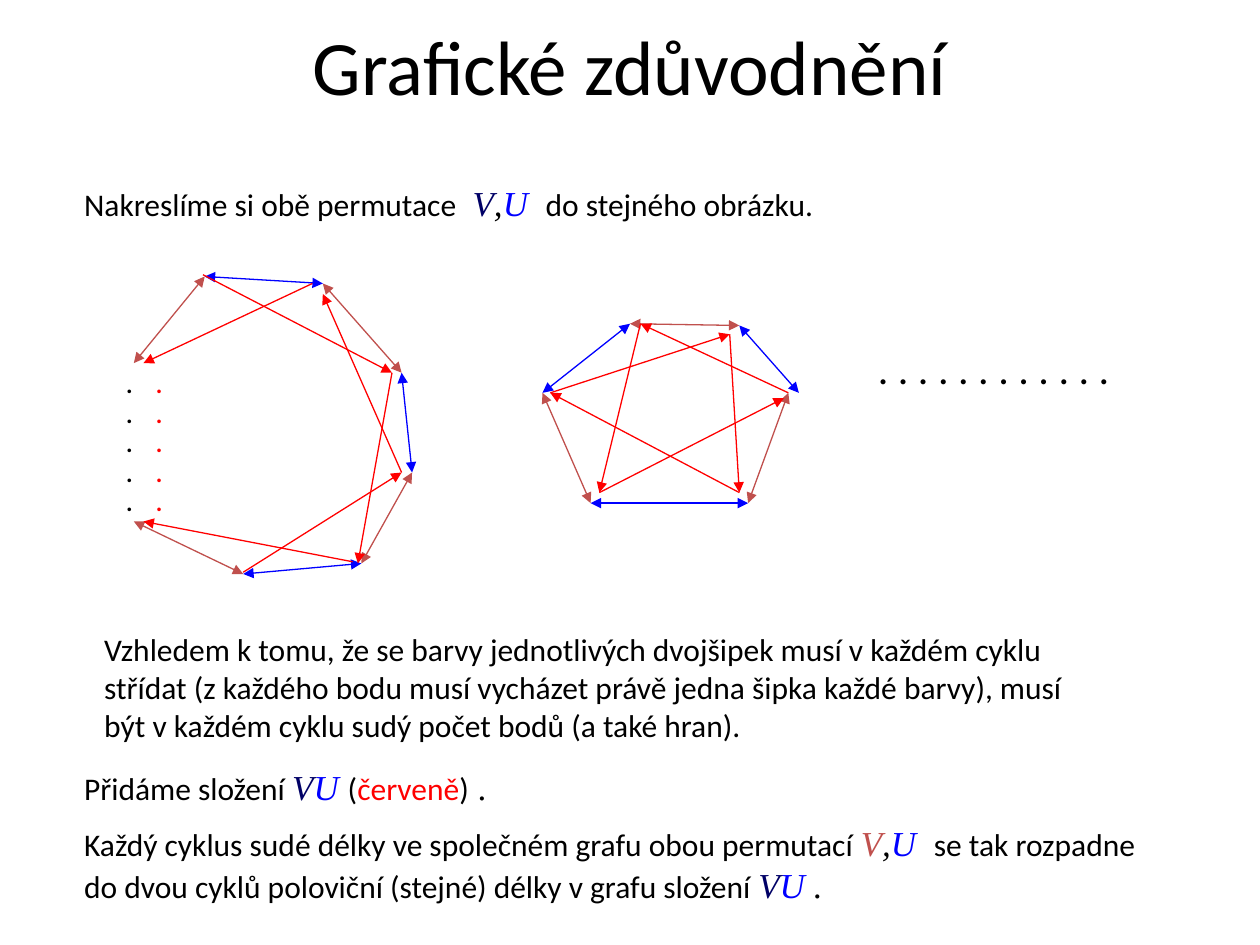
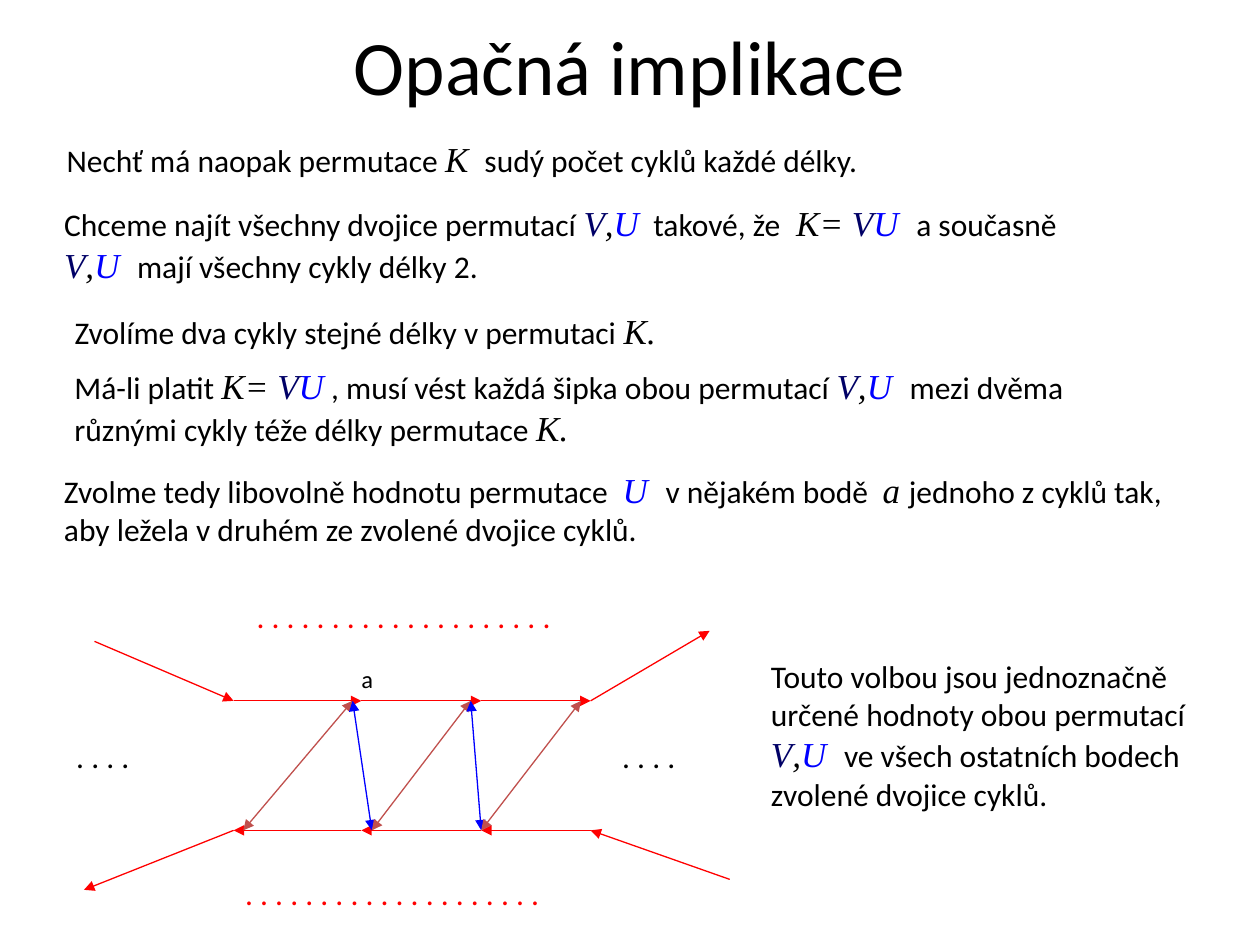
import itertools

import pptx
import pptx.dml.color
import pptx.enum.shapes
import pptx.enum.text
import pptx.oxml
import pptx.oxml.ns
import pptx.util

Pt = pptx.util.Pt

BLACK, RED, BLUE, NAVY, BROWN = "000000", "FF0000", "0000FF", "000066", "C0504D"
BODY_FONT, MATH_FONT = "Calibri", "Times New Roman"
TITLE_ONLY = 5


def rgb(hex_colour):
    return pptx.dml.color.RGBColor.from_string(hex_colour)


def math(text, colour=BLACK):
    """A piece of formula: text, colour, font, size, italic."""
    return text, colour, MATH_FONT, 20, True


V, U, COMMA = math("V", NAVY), math("U", BLUE), math(",")
U_SPACED = math("U  ", BLUE)
VU_PAIR = [V, COMMA, U_SPACED]


class Deck:
    def __init__(self):
        self.presentation = pptx.Presentation()
        self.presentation.slide_width = Pt(720)
        self.presentation.slide_height = Pt(540)
        self.slide = None

    def format_run(self, run, colour, font, size, italic=False, bold=False):
        run.font.name = font
        run.font.size = Pt(size)
        run.font.italic = italic
        run.font.bold = bold
        run.font.color.rgb = rgb(colour)

    def start_slide(self, heading):
        layout = self.presentation.slide_layouts[TITLE_ONLY]
        self.slide = self.presentation.slides.add_slide(layout)
        title = self.slide.shapes.title
        title.left, title.top, title.width, title.height = Pt(36), Pt(3.6), Pt(648), Pt(67)
        title.text_frame.text = heading
        title.text_frame.vertical_anchor = pptx.enum.text.MSO_ANCHOR.MIDDLE
        paragraph = title.text_frame.paragraphs[0]
        paragraph.alignment = pptx.enum.text.PP_ALIGN.CENTER
        self.format_run(paragraph.runs[0], BLACK, BODY_FONT, 44)

    def text(self, left, top, width, height, lines, size=18, colour=BLACK, bold=False):
        """Each line is a list of plain strings and styled pieces."""
        box = self.slide.shapes.add_textbox(Pt(left), Pt(top), Pt(width), Pt(height))
        frame = box.text_frame
        frame.word_wrap = False
        frame.auto_size = pptx.enum.text.MSO_AUTO_SIZE.SHAPE_TO_FIT_TEXT
        for number, line in enumerate(lines):
            paragraph = frame.add_paragraph() if number else frame.paragraphs[0]
            for piece in line:
                if isinstance(piece, str):
                    piece = (piece, colour, BODY_FONT, size, False)
                run = paragraph.add_run()
                run.text = piece[0]
                self.format_run(run, *piece[1:], bold=bold)

    def dots(self, left, top, width, height, count, size=18, colour=BLACK):
        self.text(left, top, width, height, [[" ".join("." * count)]], size, colour)

    def arrow_chain(self, points, colours, double=False):
        """Arrows from point to point, with the colours taken in turn."""
        for (start, end), colour in zip(itertools.pairwise(points), itertools.cycle(colours)):
            arrow = self.slide.shapes.add_connector(
                pptx.enum.shapes.MSO_CONNECTOR.STRAIGHT, *map(Pt, start + end))
            arrow.line.color.rgb = rgb(colour)
            arrow.line.width = Pt(0.75)
            outline = arrow.line._get_or_add_ln()
            for tag in ("a:headEnd", "a:tailEnd") if double else ("a:tailEnd",):
                tip = pptx.oxml.xmlchemy.OxmlElement(tag)
                tip.set("type", "triangle")
                outline.append(tip)
            arrow._element.spPr.append(pptx.oxml.xmlchemy.OxmlElement("a:effectLst"))

    def save(self):
        self.presentation.save("out.pptx")


def build_graphic_reasoning(deck):
    deck.start_slide("Grafické zdůvodnění")
    deck.text(41, 100, 467, 31, [
        ["Nakreslíme si obě permutace ", math(" "), *VU_PAIR, "do stejného obrázku."]])

    long_cycle = [(76.5, 207.5), (117, 158), (184.5, 162), (229.5, 213),
                  (235.5, 270), (206.5, 322), (139, 328), (76.5, 298)]
    hexagon = [(450.5, 224.5), (427.5, 287.5), (337.5, 287.5), (310, 224.5),
               (360, 185), (422.5, 186), (456.5, 224.5)]
    for cycle in (long_cycle, hexagon):
        deck.arrow_chain(cycle, [BROWN, BLUE], double=True)

    long_cycle_products = [
        [(178.5, 162), (82, 207.5)],
        [(139, 327), (229.5, 270), (184.5, 168)],
        [(116, 157), (224, 213), (204.5, 322)],
        [(201.5, 321), (82, 298)],
    ]
    hexagon_products = [
        [(314.5, 224.5), (417, 191), (422.5, 281.5), (314.5, 224.5)],
        [(450.5, 224.5), (366, 185), (342.5, 281.5), (448, 227.5)],
    ]
    for product in long_cycle_products + hexagon_products:
        deck.arrow_chain(product, [RED])

    for left, colour in ((82, RED), (65, BLACK)):
        deck.text(left, 207.5, 19, 91, [["."]] * 5, 14, colour, bold=True)
    deck.dots(494.5, 192, 167, 36, 12, 24)

    deck.text(52.5, 356.5, 626, 72, [
        ["Vzhledem k tomu, že se barvy jednotlivých dvojšipek musí v každém cyklu"],
        ["střídat (z každého bodu musí vycházet právě jedna šipka každé barvy), musí"],
        ["být v každém cyklu sudý počet bodů (a také hran)."]])
    deck.text(41, 434, 266, 31, [
        ["Přidáme složení ", V, math("U ", BLUE), "(",
         ("červeně", RED, BODY_FONT, 18, False), ")",
         (" .", BLACK, MATH_FONT, 20, False)]])
    deck.text(41, 466, 677, 55, [
        ["Každý cyklus sudé délky ve společném grafu obou permutací ",
         math("V", BROWN), COMMA, U_SPACED, "se tak rozpadne"],
        ["do dvou cyklů poloviční (stejné) délky v grafu složení ",
         V, math("U ", BLUE), math("."), " "]])


def build_converse(deck):
    deck.start_slide("Opačná implikace")
    deck.text(31, 75, 518, 31, [
        ["Nechť má naopak permutace ", math("K "), " sudý počet cyklů každé délky."]])
    deck.text(29.5, 111.5, 641, 55, [
        ["Chceme najít všechny dvojice permutací ", V, COMMA, U, "  takové, že ",
         math(" K= "), V, U_SPACED, "a současně"],
        [*VU_PAIR, "mají všechny cykly délky 2."]])
    deck.text(35.5, 173.5, 384, 31, [
        ["Zvolíme dva cykly stejné délky v permutaci ", math("K."), " "]])
    deck.text(35.5, 205, 631, 55, [
        ["Má-li platit ", math("K= "), V, U, " , musí vést každá šipka obou permutací ",
         *VU_PAIR, "mezi dvěma"],
        ["různými cykly téže délky permutace ", math("K.")]])
    deck.text(29.5, 264, 693, 53, [
        ["Zvolme tedy libovolně hodnotu permutace  ", U_SPACED, "v nějakém bodě  ",
         math("a "), "jednoho z cyklů tak,"],
        ["aby ležela v druhém ze zvolené dvojice cyklů."]])

    upper, lower = 400.5, 474.5
    stops = [133.5, 206.5, 275, 337.5]
    upper_cycle = [(54, 366.5), *((x, upper) for x in stops), (405.5, 360.5)]
    lower_cycle = [(417, 502.5), *((x, lower) for x in reversed(stops)), (48, 508.5)]
    for cycle in (upper_cycle, lower_cycle):
        deck.arrow_chain(cycle, [RED])
    zigzag = zip([139, 201.5, 212.5, 269, 275, 332], itertools.cycle([lower, upper]))
    deck.arrow_chain(zigzag, [BROWN, BLUE], double=True)

    deck.text(199.5, 376, 22, 24, [["a"]], 14)
    for left, top in ((139.5, 337.5), (133, 496)):
        deck.dots(left, top, 214.5, 29, 20, colour=RED)
    for left in (348.5, 36.5):
        deck.dots(left, 417.5, 55, 29, 4)

    deck.text(433.5, 372, 269, 96.5, [
        ["Touto volbou jsou jednoznačně"],
        ["určené hodnoty obou permutací"],
        [*VU_PAIR, "ve všech ostatních bodech"],
        ["zvolené dvojice cyklů."]])


def main():
    deck = Deck()
    build_graphic_reasoning(deck)
    build_converse(deck)
    deck.save()


if __name__ == "__main__":
    main()
